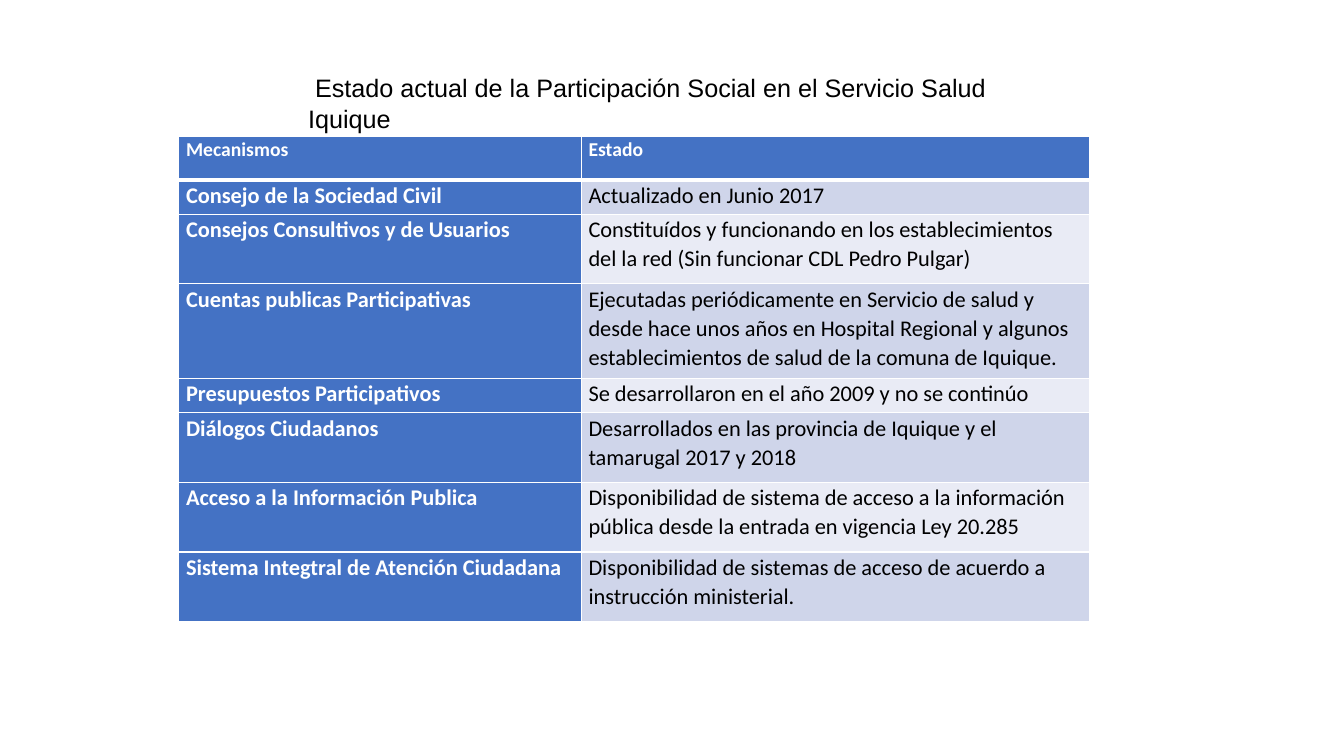
"""Build a slide with a table on the state of social participation."""
from lxml import etree
from pptx import Presentation
from pptx.dml.color import RGBColor
from pptx.enum.text import MSO_AUTO_SIZE
from pptx.oxml.ns import qn
from pptx.util import Pt

GROW = MSO_AUTO_SIZE.SHAPE_TO_FIT_TEXT
BLUE, WHITE, BLACK = "4472C4", "FFFFFF", "000000"
BANDS = ["E9EBF5", "CFD5EA"]

TITLE = " Estado actual de la Participación Social en el Servicio Salud Iquique"
ROWS = [
    ("Mecanismos", "Estado"),
    ("Consejo de la Sociedad Civil", "Actualizado en Junio 2017"),
    ("Consejos Consultivos y de Usuarios",
     "Constituídos y funcionando en los establecimientos del la red "
     "(Sin funcionar CDL Pedro Pulgar)"),
    ("Cuentas publicas Participativas",
     "Ejecutadas periódicamente en Servicio de salud y desde hace unos años "
     "en Hospital Regional y algunos establecimientos de salud de la comuna "
     "de Iquique."),
    ("Presupuestos Participativos",
     "Se desarrollaron en el año 2009 y no se continúo"),
    ("Diálogos Ciudadanos",
     "Desarrollados en las provincia de Iquique y el tamarugal 2017 y 2018"),
    ("Acceso a la Información Publica",
     "Disponibilidad de sistema de acceso a la información pública desde la "
     "entrada en vigencia Ley 20.285"),
    ("Sistema Integtral de Atención Ciudadana",
     "Disponibilidad de sistemas de acceso de acuerdo a instrucción "
     "ministerial."),
]
WIDTHS = [287.5, 363]
ONE, TWO, THREE = 24.5, 49.7, 67.7
HEIGHTS = [31, ONE, TWO, THREE, ONE, TWO, TWO, TWO]


def paint(color, tint):
    """Set a font colour or a solid fill's colour."""
    color.rgb = RGBColor.from_string(tint)


def write(frame, text, size=16, font="Calibri", color=BLACK, bold=False,
          space=None):
    """Put one formatted paragraph in a text frame."""
    frame.word_wrap = True
    para = frame.paragraphs[0]
    para.line_spacing = space
    run = para.add_run()
    run.text = text
    run.font.size = Pt(size)
    run.font.name = font
    run.font.bold = bold
    paint(run.font.color, color)


def edge(cell, top, base):
    """Draw white borders round a cell."""
    props = cell._tc.get_or_add_tcPr()
    sides = [("a:lnL", 1), ("a:lnR", 1), ("a:lnT", top), ("a:lnB", base)]
    for spot, (tag, width) in enumerate(sides):
        line = etree.Element(qn(tag), w=str(Pt(width)))
        fill = etree.SubElement(line, qn("a:solidFill"))
        etree.SubElement(fill, qn("a:srgbClr"), val=WHITE)
        props.insert(spot, line)


def main():
    """Build and save the slide."""
    deck = Presentation()
    deck.slide_width, deck.slide_height = Pt(960), Pt(540)
    slide = deck.slides.add_slide(deck.slide_layouts[6])

    box = slide.shapes.add_textbox(Pt(213), Pt(48.4), Pt(558), Pt(29))
    write(box.text_frame, TITLE, size=18, font="Arial")
    box.text_frame.auto_size = GROW

    table = slide.shapes.add_table(
        len(ROWS), len(WIDTHS), Pt(127.7), Pt(97.5),
        Pt(sum(WIDTHS)), Pt(sum(HEIGHTS))).table
    for col, width in enumerate(WIDTHS):
        table.columns[col].width = Pt(width)
    for row, (texts, height) in enumerate(zip(ROWS, HEIGHTS)):
        table.rows[row].height = Pt(height)
        for col, text in enumerate(texts):
            cell = table.cell(row, col)
            head = row == 0 or col == 0
            cell.margin_left = cell.margin_right = Pt(5.2)
            cell.margin_top = cell.margin_bottom = 0
            cell.fill.solid()
            paint(cell.fill.fore_color, BLUE if head else BANDS[row % 2])
            edge(cell, 3 if row == 1 else 1, 3 if row == 0 else 1)
            write(cell.text_frame, text, size=16 if row else 14, bold=head,
                  color=WHITE if head else BLACK, space=1.07)

    deck.save("out.pptx")


if __name__ == "__main__":
    main()
